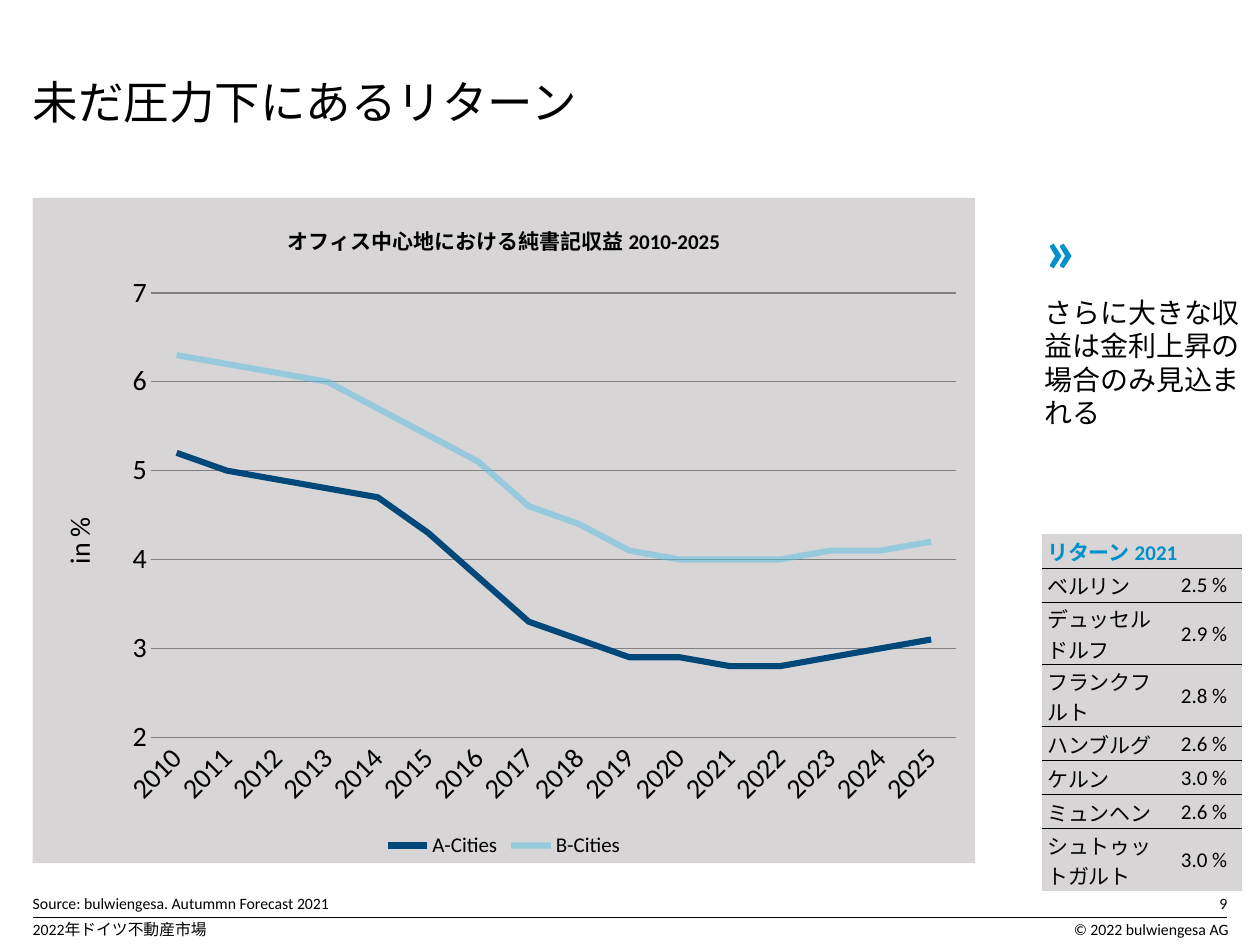
from lxml import etree
from pptx import Presentation
from pptx.chart.data import CategoryChartData
from pptx.dml.color import RGBColor
from pptx.enum.chart import XL_CHART_TYPE, XL_LEGEND_POSITION, XL_TICK_MARK
from pptx.enum.shapes import MSO_CONNECTOR
from pptx.enum.text import MSO_ANCHOR, MSO_AUTO_SIZE, PP_ALIGN
from pptx.oxml import parse_xml
from pptx.oxml.ns import nsdecls, qn
from pptx.util import Inches, Pt

BLACK, GREY, PANEL, ACCENT = "000000", "808080", "D7D5D6", "0091CA"


def rgb(value):
    return RGBColor.from_string(value)


def write(tf, text, size=9, color=BLACK, bold=False, font="Calibri", align=PP_ALIGN.LEFT,
          anchor=MSO_ANCHOR.TOP, before=None, wrap=True, add=False, frame=True):
    if frame:
        tf.word_wrap = wrap
        tf.auto_size = MSO_AUTO_SIZE.NONE
        tf.vertical_anchor = anchor
        tf.margin_left = tf.margin_top = tf.margin_right = tf.margin_bottom = 0
    p = tf.add_paragraph() if add else tf.paragraphs[0]
    p.alignment = align
    if before is not None:
        p.space_before = Pt(before)
    r = p.add_run()
    r.text = text
    r.font.size, r.font.bold, r.font.name = Pt(size), bold, font
    r.font.color.rgb = rgb(color)


prs = Presentation()
prs.slide_width, prs.slide_height = Inches(10), Inches(7.5)
s = prs.slides.add_slide(prs.slide_layouts[5])

# Title
title = s.shapes.title
title.left, title.top, title.width, title.height = map(Inches, (0.26, 0.59, 9.49, 0.44))
write(title.text_frame, "未だ圧力下にあるリターン", size=26, font="Cambria")

# Footer rule
rule = s.shapes.add_connector(MSO_CONNECTOR.STRAIGHT, Inches(0.26), Inches(7.28),
                              Inches(9.74), Inches(7.28))
rule.line.color.rgb = rgb(BLACK)
rule.line.width = Pt(0.4)
etree.SubElement(rule.element.spPr, qn("a:effectLst"))

# Yield chart
data = CategoryChartData()
data.categories = [str(year) for year in range(2010, 2026)]
data.add_series("A-Cities", (5.2, 5, 4.9, 4.8, 4.7, 4.3, 3.8, 3.3, 3.1, 2.9, 2.9, 2.8, 2.8, 2.9, 3, 3.1))
data.add_series("B-Cities", (6.3, 6.2, 6.1, 6, 5.7, 5.4, 5.1, 4.6, 4.4, 4.1, 4, 4, 4, 4.1, 4.1, 4.2))
chart = s.shapes.add_chart(XL_CHART_TYPE.LINE, Inches(0.26), Inches(1.57),
                           Inches(7.48), Inches(5.28), data).chart
chart.font.size, chart.font.name = Pt(10), "Calibri"
chart.font.color.rgb = rgb(BLACK)

chart.has_title = True
write(chart.chart_title.text_frame, "オフィス中心地における純書記収益 2010-2025",
      size=12, bold=True, align=PP_ALIGN.CENTER, frame=False)

chart.has_legend = True
chart.legend.position = XL_LEGEND_POSITION.BOTTOM
chart.legend.include_in_layout = False
chart.legend.font.size, chart.legend.font.name = Pt(12), "Calibri"
chart.legend.font.color.rgb = rgb(BLACK)

years, percent = chart.category_axis, chart.value_axis
for axis in (years, percent):
    axis.major_tick_mark = axis.minor_tick_mark = XL_TICK_MARK.NONE
    axis.tick_labels.font.size, axis.tick_labels.font.name = Pt(16), "Calibri"
    axis.tick_labels.font.color.rgb = rgb(BLACK)
for line in (years.format.line, percent.major_gridlines.format.line):
    line.color.rgb = rgb(GREY)
    line.width = Pt(0.75)

percent.minimum_scale, percent.maximum_scale, percent.major_unit = 2, 7, 1
percent.format.line.fill.background()
percent.tick_labels.number_format = "General"
percent.tick_labels.number_format_is_linked = False
percent.has_title = True
write(percent.axis_title.text_frame, "in %", size=16, align=PP_ALIGN.CENTER, frame=False)

plot = chart.plots[0]
plot.vary_by_categories = False
for series, color in zip(plot.series, ("00487A", "58BEE4")):
    series.smooth = False
    series.format.line.color.rgb = rgb(color)
    series.format.line.width = Pt(3.5)

# Label rotation, half-transparent second line, background and plot position
chart_el = chart.element.find(qn("c:chart"))
area = chart_el.find(qn("c:plotArea"))
labels = area.find(qn("c:catAx")).find(qn("c:txPr"))
labels.find(qn("a:bodyPr")).set("rot", "-2700000")
axis_title = area.find(qn("c:valAx")).find(qn("c:title"))
body = axis_title.find(".//" + qn("a:bodyPr"))
body.set("rot", "-5400000")
body.set("vert", "horz")
b_line = area.findall(".//" + qn("c:ser"))[1].find(".//" + qn("a:srgbClr"))
etree.SubElement(b_line, qn("a:alpha")).set("val", "50000")
chart_el.addnext(parse_xml(
    f'<c:spPr {nsdecls("c", "a")}><a:solidFill><a:srgbClr val="{PANEL}"/></a:solidFill>'
    '<a:ln><a:noFill/></a:ln></c:spPr>'))
for old in area.findall(qn("c:layout")):
    area.remove(old)
area.insert(0, parse_xml(
    f'<c:layout {nsdecls("c")}><c:manualLayout><c:layoutTarget val="inner"/>'
    '<c:xMode val="edge"/><c:yMode val="edge"/><c:x val="0.126"/><c:y val="0.143"/>'
    '<c:w val="0.854"/><c:h val="0.668"/></c:manualLayout></c:layout>'))

# Footer texts
for text, box, fmt in (
    ("2022年ドイツ不動産市場", (0.26, 7.3, 6.69, 0.15), {}),
    ("© 2022 bulwiengesa AG", (7.19, 7.3, 2.56, 0.15), {"align": PP_ALIGN.RIGHT}),
    ("9", (9.15, 7.09, 0.59, 0.15), {"align": PP_ALIGN.RIGHT}),
    ("Source: bulwiengesa. Autummn Forecast 2021", (0.26, 7.09, 7.48, 0.15),
     {"anchor": MSO_ANCHOR.BOTTOM}),
):
    write(s.shapes.add_textbox(*map(Inches, box)).text_frame, text, **fmt)

# Key message
tf = s.shapes.add_textbox(Inches(8.29), Inches(1.66), Inches(1.59), Inches(5.28)).text_frame
write(tf, "»", size=36, color=ACCENT, bold=True)
write(tf, "さらに大きな収益は金利上昇の場合のみ見込まれる", size=16, before=6, add=True)

# Returns table
rows = (("リターン 2021", ""), ("ベルリン", "2.5 %"), ("デュッセルドルフ", "2.9 %"),
        ("フランクフルト", "2.8 %"), ("ハンブルグ", "2.6 %"), ("ケルン", "3.0 %"),
        ("ミュンヘン", "2.6 %"), ("シュトゥットガルト", "3.0 %"))
table = s.shapes.add_table(len(rows), 2, Inches(8.27), Inches(4.24),
                           Inches(1.59), Inches(0.27 * len(rows))).table
table.first_row = table.horz_banding = False
# Style without fills and grid
table._tbl.tblPr.find(qn("a:tableStyleId")).text = "{2D5ABB26-0587-4C30-8999-92F81FD0307C}"
table.columns[0].width, table.columns[1].width = Inches(0.89), Inches(0.7)
table.cell(0, 0).merge(table.cell(0, 1))
for i, row in enumerate(rows):
    for j, text in enumerate(row):
        cell = table.cell(i, j)
        cell.fill.solid()
        cell.fill.fore_color.rgb = rgb(PANEL)
        cell.vertical_anchor = MSO_ANCHOR.MIDDLE
        cell.margin_left, cell.margin_top, cell.margin_bottom = Inches(0.04), Inches(0.01), 0
        cell.margin_right = Inches(0.12 if j else 0.01)
        if text:
            write(cell.text_frame, text, size=12, color=BLACK if i else ACCENT, bold=i == 0,
                  align=PP_ALIGN.RIGHT if j else PP_ALIGN.LEFT, frame=False)
        if i < len(rows) - 1:
            cell._tc.tcPr.insert(0, parse_xml(
                f'<a:lnB {nsdecls("a")} w="{int(Pt(0.75))}"><a:solidFill>'
                f'<a:srgbClr val="{BLACK}"/></a:solidFill></a:lnB>'))

prs.save("out.pptx")
